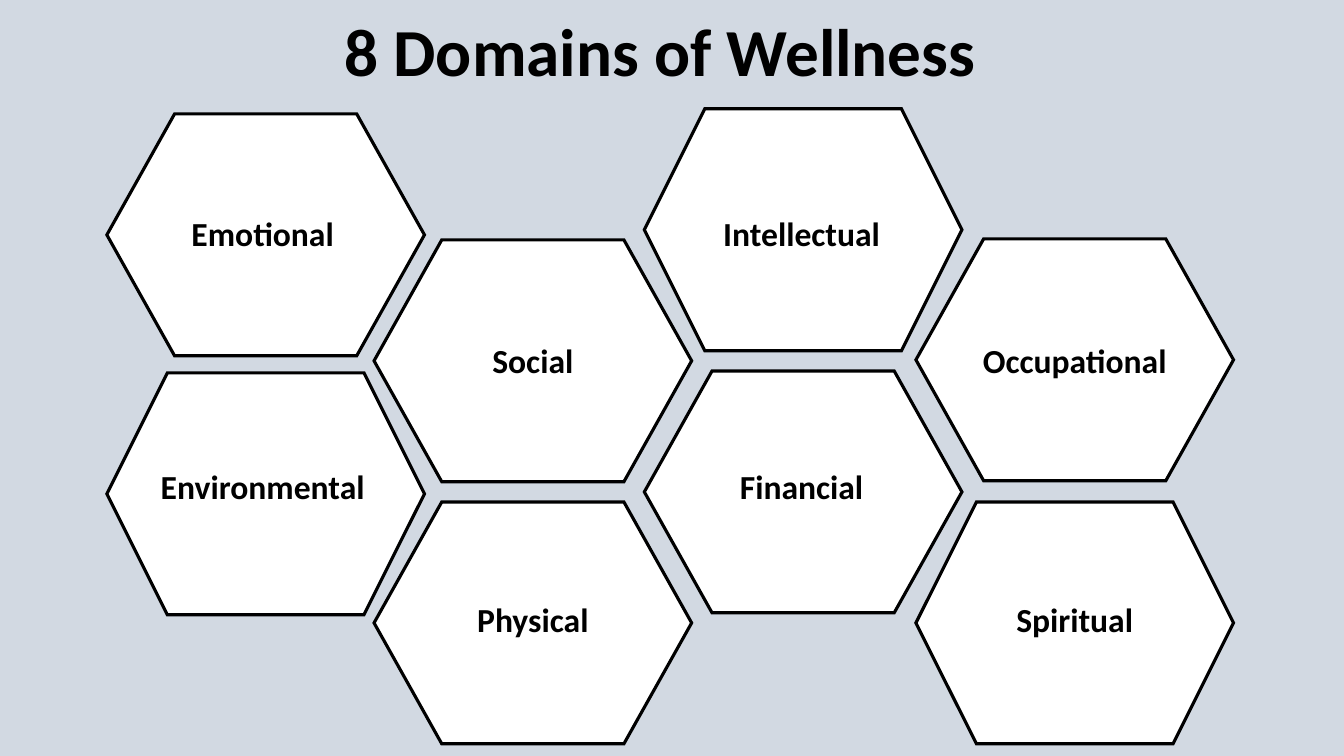
import dataclasses

import lxml.etree
import pptx
import pptx.dml.color
import pptx.enum.shapes
import pptx.enum.text
import pptx.oxml.ns
import pptx.util

WIDE, HIGH = 13.33, 7.5
COLORS = {"back": "D2D9E2", "cell": "FFFFFF", "ink": "000000"}

# All lengths below are percentages of the slide's width or height.
HEX_W, HEX_H = 23.63, 32
HEX_X = (7.95, 27.83, 47.94, 68.15)
LABEL_X = (7.73, 27.83, 47.83, 68.15)
LABEL_Y = (27.47, 44.27, 60.93, 78.53)
LABEL_H = 6.67


@dataclasses.dataclass
class Domain:
    name: str
    col: int
    row: int
    top: float
    slant: float = 0.28


DOMAINS = (
    Domain("Emotional", 0, 0, 15.07),
    Domain("Environmental", 0, 2, 49.33, 0.25),
    Domain("Social", 1, 1, 31.73),
    Domain("Physical", 1, 3, 66.4),
    Domain("Intellectual", 2, 0, 14.4, 0.25),
    Domain("Financial", 2, 2, 49.07),
    Domain("Occupational", 3, 1, 31.6),
    Domain("Spiritual", 3, 3, 66.4, 0.25),
)


def tint(name: str) -> pptx.dml.color.RGBColor:
    return pptx.dml.color.RGBColor.from_string(COLORS[name])


def place(x: float, y: float, w: float, h: float) -> list[int]:
    """Turn shares of the slide into lengths."""
    sides = (WIDE, HIGH, WIDE, HIGH)
    return [pptx.util.Inches(part * side / 100)
            for part, side in zip((x, y, w, h), sides)]


def style(item: object, form: dict) -> None:
    for key, value in form.items():
        setattr(item, key, value)


def write(slide, text: str, box: list[int], size: int, anchor, space: float) -> None:
    frame = slide.shapes.add_textbox(*box).text_frame
    style(frame, {"word_wrap": True, "vertical_anchor": anchor, "text": text})
    para = frame.paragraphs[0]
    style(para, {"alignment": pptx.enum.text.PP_ALIGN.CENTER, "line_spacing": space})
    font = para.runs[0].font
    style(font, {"name": "Calibri", "size": pptx.util.Pt(size), "bold": True})
    font.color.rgb = tint("ink")


def draw(slide, domain: Domain) -> None:
    cell = slide.shapes.add_shape(
        pptx.enum.shapes.MSO_SHAPE.HEXAGON,
        *place(HEX_X[domain.col], domain.top, HEX_W, HEX_H))
    cell.adjustments[0] = domain.slant
    cell.shadow.inherit = False
    cell.fill.solid()
    cell.fill.fore_color.rgb = tint("cell")
    cell.line.color.rgb = tint("ink")
    cell.line.width = pptx.util.Pt(2.25)
    lxml.etree.SubElement(cell.get_or_add_ln(), pptx.oxml.ns.qn("a:miter"), lim="800000")
    box = place(LABEL_X[domain.col], LABEL_Y[domain.row], HEX_W, LABEL_H)
    write(slide, domain.name, box, 24, pptx.enum.text.MSO_ANCHOR.TOP, 1.0)


def main() -> None:
    deck = pptx.Presentation()
    style(deck, {"slide_width": pptx.util.Inches(WIDE),
                 "slide_height": pptx.util.Inches(HIGH)})
    slide = deck.slides.add_slide(deck.slide_layouts[6])
    slide.background.fill.solid()
    slide.background.fill.fore_color.rgb = tint("back")
    write(slide, "8 Domains of Wellness", place(11.63, -0.8, 75, 13.47), 48,
          pptx.enum.text.MSO_ANCHOR.BOTTOM, 0.9)
    for domain in DOMAINS:
        draw(slide, domain)
    deck.save("out.pptx")


if __name__ == "__main__":
    main()
